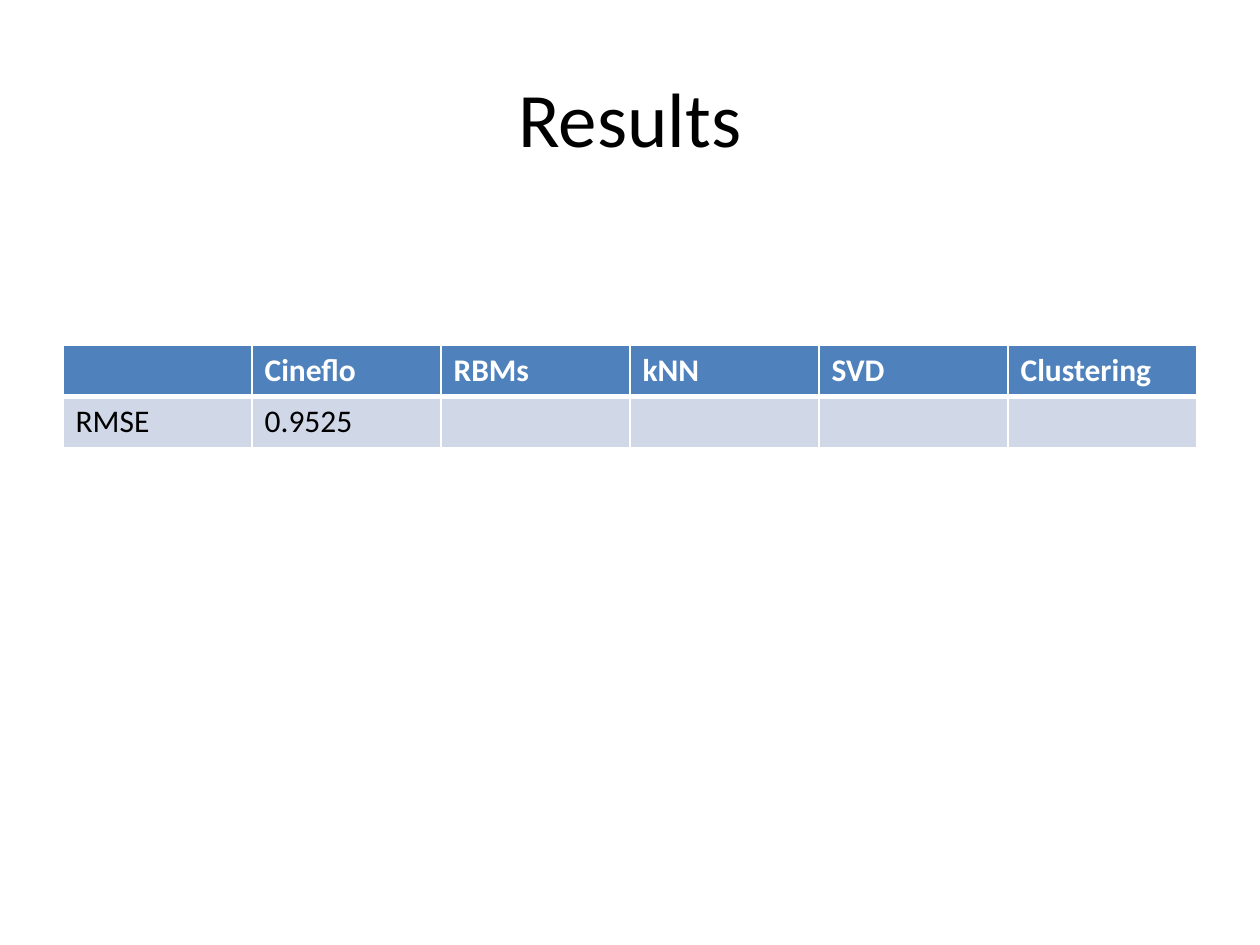
from lxml.etree import SubElement
from pptx import Presentation
from pptx.dml.color import RGBColor
from pptx.enum.text import MSO_ANCHOR, PP_ALIGN
from pptx.oxml.ns import qn
from pptx.util import Cm, Pt

BLACK = RGBColor(0x00, 0x00, 0x00)
WHITE = RGBColor(0xFF, 0xFF, 0xFF)
BLUE = RGBColor(0x4F, 0x81, 0xBD)
PALE = RGBColor(0xD0, 0xD8, 0xE8)

ROWS = [
    ["", "Cineflo", "RBMs", "kNN", "SVD", "Clustering"],
    ["RMSE", "0.9525", "", "", "", ""],
]


class Deck:
    font = "Calibri"
    left, width = Cm(1.27), Cm(22.86)

    def __init__(self, slide):
        self.slide = slide

    def add_text(self, para, text, size, color, bold=False):
        run = para.add_run()
        run.text = text
        font = run.font
        font.name, font.size, font.bold = self.font, Pt(size), bold
        font.color.rgb = color

    def title(self, text, top, height):
        box = self.slide.shapes.add_textbox(self.left, top, self.width, height)
        frame = box.text_frame
        frame.word_wrap = True
        frame.vertical_anchor = MSO_ANCHOR.MIDDLE
        para = frame.paragraphs[0]
        para.alignment = PP_ALIGN.CENTER
        self.add_text(para, text, 44, BLACK)

    def edge(self, cell, side, width):
        """Draw a white border on one side (L, R, T or B) of a cell."""
        props = cell._tc.get_or_add_tcPr()
        line = SubElement(props, qn(f"a:ln{side}"), w=str(Pt(width)))
        fill = SubElement(line, qn("a:solidFill"))
        SubElement(fill, qn("a:srgbClr"), val=str(WHITE))

    def table(self, rows, top, high):
        count = len(rows[0])
        frame = self.slide.shapes.add_table(
            len(rows), count, self.left, top, self.width, high * len(rows))
        grid = frame.table
        for col in grid.columns:
            col.width = self.width // count
        for r, row in enumerate(rows):
            head = r == 0
            grid.rows[r].height = high
            # The rule between header and body is thicker than the rest.
            sides = {"L": 1, "R": 1, "T": 1 if head else 3, "B": 3 if head else 1}
            for c, text in enumerate(row):
                cell = grid.cell(r, c)
                for side, width in sides.items():
                    self.edge(cell, side, width)
                cell.fill.solid()
                cell.fill.fore_color.rgb = BLUE if head else PALE
                if text:
                    self.add_text(cell.text_frame.paragraphs[0], text, 18,
                                  WHITE if head else BLACK, head)


def main():
    prs = Presentation()
    prs.slide_width, prs.slide_height = Cm(25.4), Cm(19.05)
    deck = Deck(prs.slides.add_slide(prs.slide_layouts[6]))
    deck.title("Results", Cm(0.76), Cm(3.18))
    deck.table(ROWS, Cm(6.96), Cm(1.03))
    prs.save("out.pptx")


if __name__ == "__main__":
    main()
